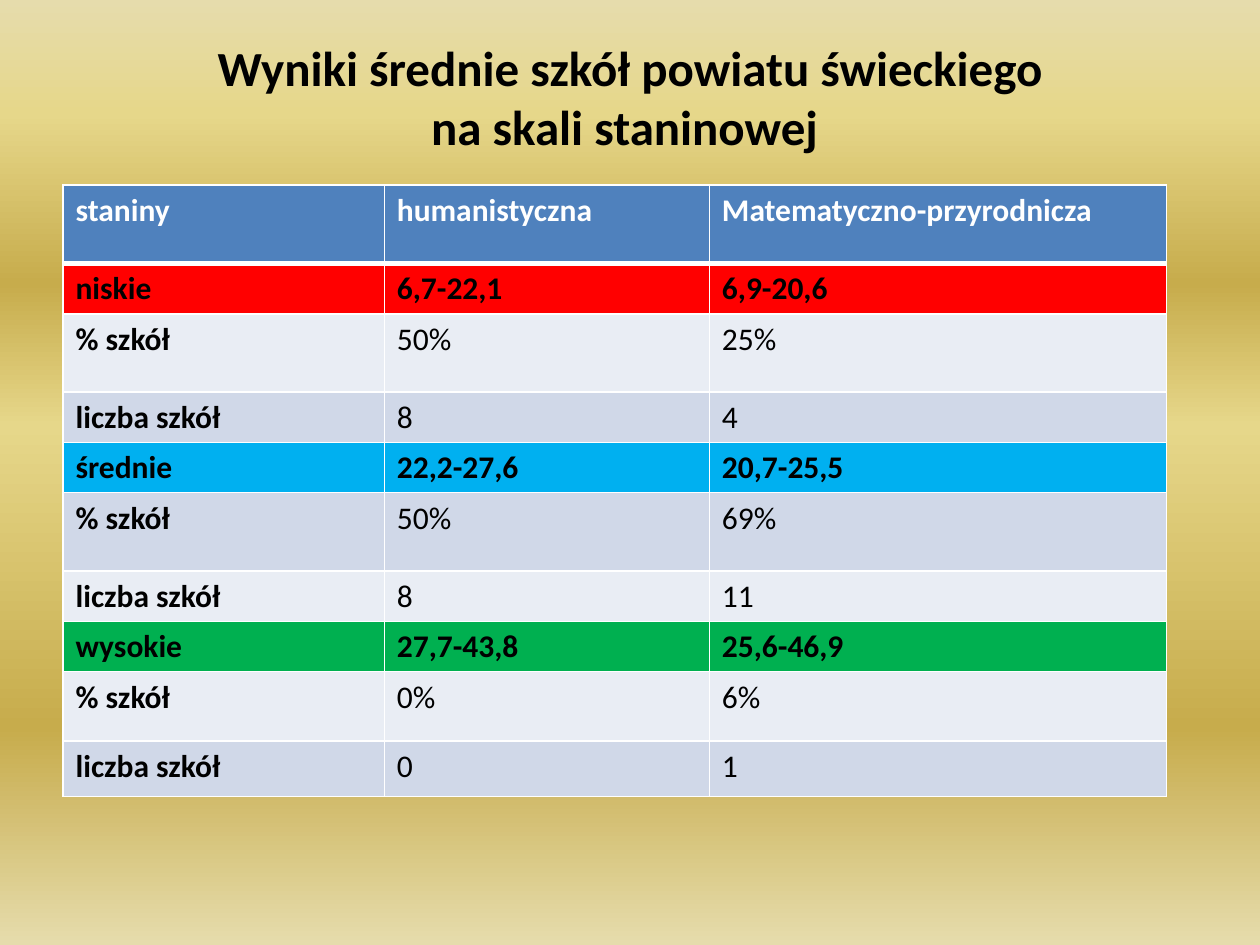
from lxml import etree
from pptx import Presentation
from pptx import util as u
from pptx.dml.color import RGBColor
from pptx.enum import text
from pptx.oxml import ns

TITLE = "Wyniki średnie szkół powiatu świeckiego\vna skali staninowej "
HEADER = ("staniny", "humanistyczna", "Matematyczno-przyrodnicza")
GROUPS = [
    ("FF0000", ("niskie", "6,7-22,1", "6,9-20,6"), ("50%", "25%"), ("8", "4")),
    ("00B0F0", ("średnie", "22,2-27,6", "20,7-25,5"), ("50%", "69%"), ("8", "11")),
    ("00B050", ("wysokie", "27,7-43,8", "25,6-46,9"), ("0%", "6%"), ("0", "1")),
]
BANDS = ("E9EDF4", "D0D8E8")
COLUMN_WIDTHS = (2.55, 2.58, 3.63)
ROW_HEIGHTS = (0.62, 0.4, 0.62, 0.4, 0.4, 0.62, 0.4, 0.4, 0.55, 0.44)
BACKGROUND = [(0, "E6DCAC"), (12, "E6D78A"), (30, "C7AC4C"),
              (45, "E6D78A"), (77, "C7AC4C"), (100, "E6DCAC")]


def color(value):
    return RGBColor.from_string(value)


def format_font(font, size, bold, fill):
    for name, value in {"name": "Calibri", "size": u.Pt(size), "bold": bold}.items():
        setattr(font, name, value)
    font.color.rgb = color(fill)


def paint_background(slide):
    fill = slide.background.fill
    fill.gradient()
    fill.gradient_angle = 270
    stops = next(slide.element.iter(ns.qn("a:gsLst")))
    for stop in list(stops):
        stops.remove(stop)
    for position, value in BACKGROUND:
        stop = etree.SubElement(stops, ns.qn("a:gs"), pos=str(position * 1000))
        etree.SubElement(stop, ns.qn("a:srgbClr"), val=value)


def add_title(slide):
    box = slide.shapes.add_textbox(*map(u.Inches, (0.5, 0.3, 9, 0.93)))
    frame = box.text_frame
    frame.word_wrap = True
    frame.vertical_anchor = text.MSO_ANCHOR.MIDDLE
    paragraph = frame.paragraphs[0]
    paragraph.text = TITLE
    paragraph.alignment = text.PP_ALIGN.CENTER
    for run in paragraph.runs:
        format_font(run.font, 28, True, "000000")


def add_borders(cell, widths):
    properties = cell._tc.get_or_add_tcPr()
    for index, (side, width) in enumerate(widths.items()):
        line = etree.Element(ns.qn(f"a:ln{side}"), w=str(u.Pt(width)))
        fill = etree.SubElement(line, ns.qn("a:solidFill"))
        etree.SubElement(fill, ns.qn("a:srgbClr"), val="FFFFFF")
        properties.insert(index, line)


def table_rows():
    rows = [(HEADER, "4F81BD", True)]
    for fill, ranges, percents, counts in GROUPS:
        rows.append((ranges, fill, True))
        for label, values in (("% szkół", percents), ("liczba szkół", counts)):
            rows.append(((label, *values), BANDS[len(rows) % 2], False))
    return rows


def add_results(slide):
    rows = table_rows()
    frame = slide.shapes.add_table(
        len(rows), len(HEADER), u.Inches(0.5), u.Inches(1.47),
        u.Inches(sum(COLUMN_WIDTHS)), u.Inches(sum(ROW_HEIGHTS)))
    table = frame.table
    for column, width in zip(table.columns, COLUMN_WIDTHS):
        column.width = u.Inches(width)
    for row, height in zip(table.rows, ROW_HEIGHTS):
        row.height = u.Inches(height)
    for r, (values, fill, bold) in enumerate(rows):
        for c, value in enumerate(values):
            cell = table.cell(r, c)
            cell.text = value
            cell.fill.solid()
            cell.fill.fore_color.rgb = color(fill)
            font = cell.text_frame.paragraphs[0].runs[0].font
            format_font(font, 18, bold or c == 0, "000000" if r else "FFFFFF")
            add_borders(cell, {"L": 1, "R": 1, "T": 3 if r == 1 else 1,
                               "B": 1 if r else 3})


def main():
    presentation = Presentation()
    presentation.slide_width = u.Inches(10)
    presentation.slide_height = u.Inches(7.5)
    slide = presentation.slides.add_slide(presentation.slide_layouts[6])
    paint_background(slide)
    add_title(slide)
    add_results(slide)
    presentation.save("out.pptx")


if __name__ == "__main__":
    main()
